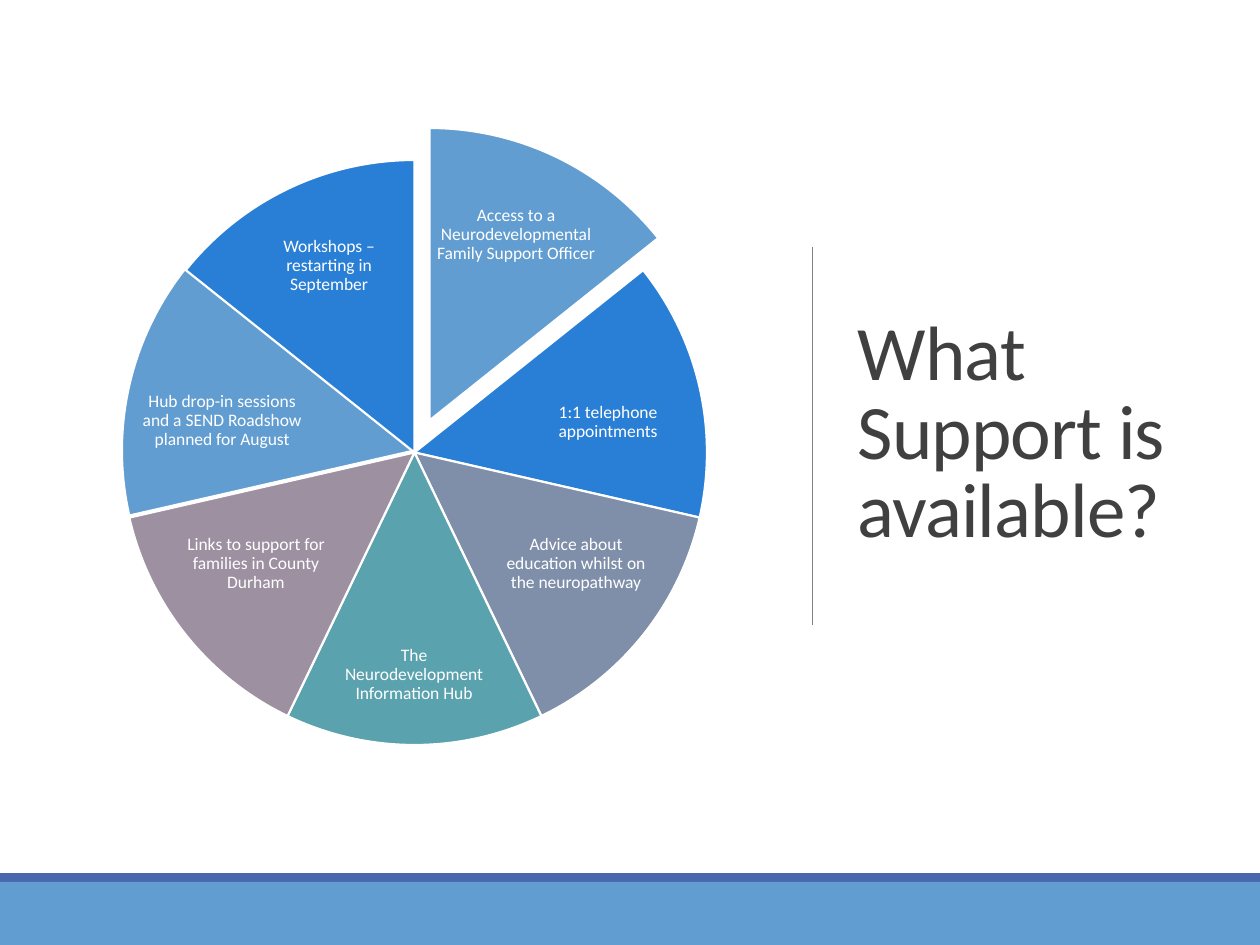
import dataclasses

import pptx
import pptx.dml.color
import pptx.enum.shapes
import pptx.enum.text
import pptx.oxml.ns
import pptx.util
from lxml import etree

SHAPE = pptx.enum.shapes.MSO_SHAPE
ALIGN = pptx.enum.text.PP_ALIGN
MIDDLE = pptx.enum.text.MSO_ANCHOR.MIDDLE


@dataclasses.dataclass(frozen=True)
class Theme:
    font: str = "Calibri"
    head: int = 44
    body: int = 10
    white: str = "FFFFFF"
    ink: str = "404040"
    rule: str = "808080"
    navy: str = "4A66AC"
    sky: str = "629DD1"
    blue: str = "297FD5"
    slate: str = "7F8FA9"
    teal: str = "5AA2AE"
    mauve: str = "9D90A0"


THEME = Theme()

# Text, colour, shift of the wedge, label box; all relative to the wheel
WEDGES = [
    ("Access to a Neurodevelopmental Family Support Officer", THEME.sky,
     (15, -32), (314, 24, 160, 101)),
    ("1:1 telephone appointments", THEME.blue, (0, 0), (401, 208, 170, 108)),
    ("Advice about education whilst on the neuropathway", THEME.slate,
     (0, 0), (377, 348, 154, 111)),
    ("The Neurodevelopment Information Hub", THEME.teal,
     (0, 0), (214, 459, 156, 111)),
    ("Links to support for families in County Durham", THEME.mauve,
     (0, 0), (57, 348, 154, 111)),
    ("Hub drop-in sessions and a SEND Roadshow planned for August", THEME.sky,
     (0, -2), (15, 207, 170, 108)),
    ("Workshops – restarting in September", THEME.blue,
     (0, 0), (127, 55, 160, 101)),
]


def px(*nums):
    return [pptx.util.Emu(round(n * 914400 / 126)) for n in nums]


def tint(code):
    return pptx.dml.color.RGBColor.from_string(code)


def add_form(shapes, kind, box, fill):
    form = shapes.add_shape(kind, *px(*box))
    form.shadow.inherit = False
    form.fill.solid()
    form.fill.fore_color.rgb = tint(fill)
    form.line.fill.background()
    return form


def write(frame, text, size, color, align, pitch):
    frame.word_wrap = True
    frame.auto_size = pptx.enum.text.MSO_AUTO_SIZE.NONE
    frame.vertical_anchor = MIDDLE
    para = frame.paragraphs[0]
    para.alignment = align
    para.line_spacing = pitch
    run = para.add_run()
    run.text = text
    run.font.name = THEME.font
    run.font.size = pptx.util.Pt(size)
    run.font.color.rgb = tint(color)
    return run


def add_label(shapes, text, box):
    frame = shapes.add_textbox(*px(*box)).text_frame
    frame.margin_left = frame.margin_right = px(1)[0]
    frame.margin_top = frame.margin_bottom = px(1)[0]
    write(frame, text, THEME.body, THEME.white, ALIGN.CENTER, 0.9)
    frame.paragraphs[0].space_after = pptx.util.Pt(3.5)


def add_wheel(slide, left, top, size):
    """Draw equal wedges clockwise from twelve o'clock, each with its label."""
    shapes = slide.shapes.add_group_shape().shapes
    step = 360 / len(WEDGES)
    for i, (text, fill, (dx, dy), (x, y, w, h)) in enumerate(WEDGES):
        wedge = add_form(shapes, SHAPE.PIE,
                         (left + dx, top + dy, size, size), fill)
        for k in range(2):
            # Angles are stored in 60000ths of a degree, scaled by 100000
            wedge.adjustments[k] = (270 + (i + k) * step) % 360 * 0.6
        wedge.line.color.rgb = tint(THEME.white)
        wedge.line.width = pptx.util.Pt(1.25)
        add_label(shapes, text, (left + x, top + y, w, h))


def add_title(slide, left, top, width, height):
    title = slide.shapes.title
    title.left, title.top, title.width, title.height = px(
        left, top, width, height)
    run = write(title.text_frame, "What Support is available?",
                THEME.head, THEME.ink, ALIGN.LEFT, 0.85)
    run.font._element.set("spc", "-50")


def add_rule(slide, x, top, height):
    rule = slide.shapes.add_connector(
        pptx.enum.shapes.MSO_CONNECTOR.STRAIGHT, *px(x, top, x, top + height))
    rule.line.color.rgb = tint(THEME.rule)
    rule.line.width = pptx.util.Pt(0.5)
    etree.SubElement(rule._element.spPr, pptx.oxml.ns.qn("a:effectLst"))


def add_base(slide, width, height):
    """Lay a white panel behind the title and two bands along the foot."""
    edge, band = 873, 882
    panel = add_form(slide.shapes, SHAPE.RECTANGLE,
                     (0, 0, width, edge), THEME.white)
    slide.shapes._spTree.insert(2, panel._element)
    add_form(slide.shapes, SHAPE.RECTANGLE,
             (0, edge, width, band - edge), THEME.navy)
    add_form(slide.shapes, SHAPE.RECTANGLE,
             (0, band, width, height - band), THEME.sky)


def main():
    deck = pptx.Presentation()
    deck.slide_width, deck.slide_height = px(1260, 945)
    slide = deck.slides.add_slide(deck.slide_layouts[5])
    add_base(slide, 1260, 945)
    add_title(slide, 845, 87, 349, 697)
    add_rule(slide, 812, 247, 378)
    add_wheel(slide, 122, 160, 585)
    deck.save("out.pptx")


if __name__ == "__main__":
    main()
